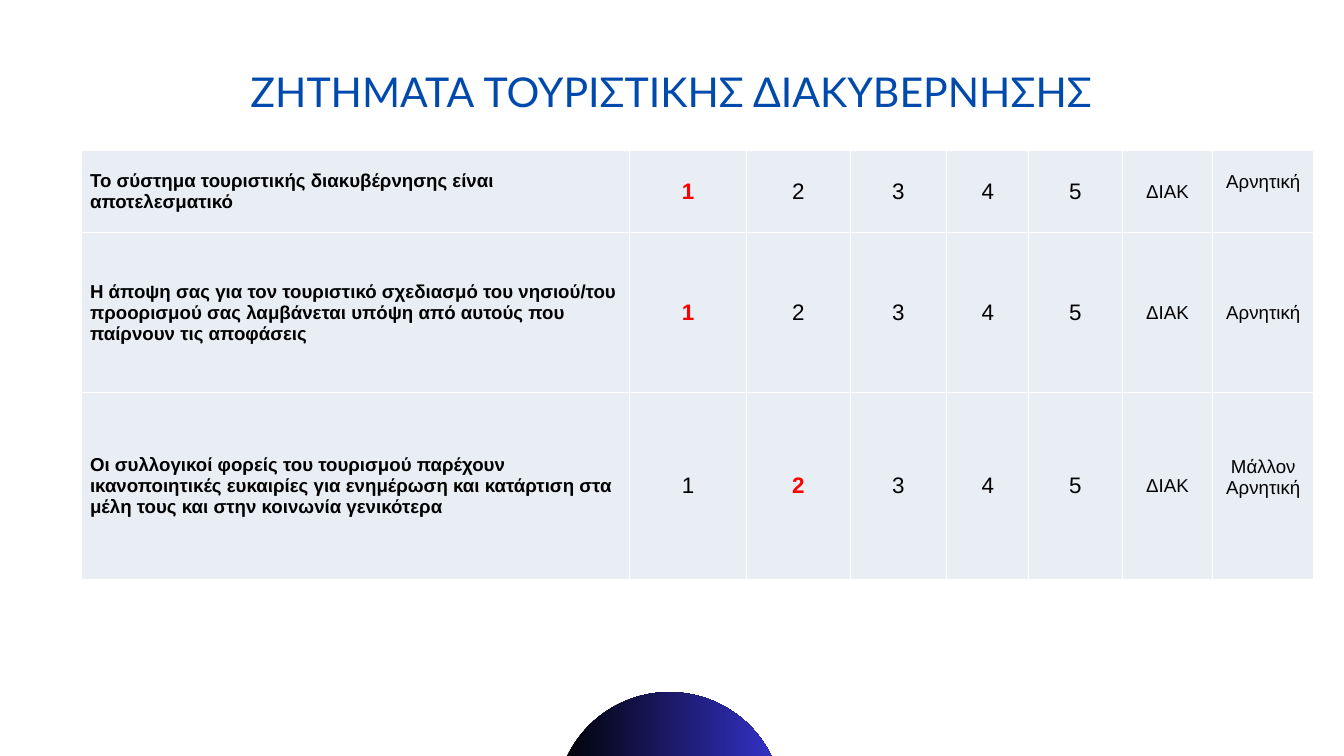
"""Build a slide with a table of survey answers on tourism governance."""
import pptx
import pptx.dml.color
import pptx.enum.shapes
import pptx.enum.text
import pptx.util

Inches = pptx.util.Inches
Pt = pptx.util.Pt
ALIGN = pptx.enum.text.PP_ALIGN
MIDDLE = pptx.enum.text.MSO_ANCHOR.MIDDLE


def color(hex_string):
    return pptx.dml.color.RGBColor.from_string(hex_string)


def format_font(font, name, size, hex_string, bold=False):
    font.name = name
    font.size = Pt(size)
    font.bold = bold
    font.color.rgb = color(hex_string)


deck = pptx.Presentation()
deck.slide_width = Inches(20)
deck.slide_height = Inches(11.25)
slide = deck.slides.add_slide(deck.slide_layouts[5])

title = slide.shapes.title
title.left, title.top = Inches(0.66), Inches(0.73)
title.width, title.height = Inches(18.67), Inches(1.25)
title.text_frame.text = "ΖΗΤΗΜΑΤΑ ΤΟΥΡΙΣΤΙΚΗΣ ΔΙΑΚΥΒΕΡΝΗΣΗΣ"
title.text_frame.auto_size = pptx.enum.text.MSO_AUTO_SIZE.NONE
title.text_frame.vertical_anchor = MIDDLE
title_para = title.text_frame.paragraphs[0]
title_para.alignment = ALIGN.CENTER
format_font(title_para.runs[0].font, "Lato", 44, "004AAD")

column_widths = [8.16, 1.74, 1.54, 1.44, 1.22, 1.39, 1.35, 1.5]
questions = [
    ("Το σύστημα τουριστικής διακυβέρνησης είναι αποτελεσματικό",
     "1", "Αρνητική", 1.22, 0.3),
    ("Η άποψη σας για τον τουριστικό σχεδιασμό του νησιού/του προορισμού σας "
     "λαμβάνεται υπόψη από αυτούς που παίρνουν τις αποφάσεις",
     "1", "Αρνητική", 2.38, 0),
    ("Οι συλλογικοί φορείς του τουρισμού παρέχουν ικανοποιητικές ευκαιρίες για "
     "ενημέρωση και κατάρτιση στα μέλη τους και στην κοινωνία γενικότερα",
     "2", "Μάλλον Αρνητική", 2.78, 0.27),
]
table_height = sum(question[3] for question in questions)
table = slide.shapes.add_table(
    len(questions), len(column_widths), Inches(1.21), Inches(2.24),
    Inches(sum(column_widths)), Inches(table_height)).table
table.first_row = False
table.horz_banding = False
for column, width in zip(table.columns, column_widths):
    column.width = Inches(width)

for row, (question, answer, verdict, height, verdict_lift) in zip(table.rows, questions):
    row.height = Inches(height)
    labels = [question, "1", "2", "3", "4", "5", "ΔΙΑΚ", verdict]
    for cell, label in zip(row.cells, labels):
        is_question = label == question
        is_answer = label == answer
        cell.fill.solid()
        cell.fill.fore_color.rgb = color("E9EDF4")
        cell.vertical_anchor = MIDDLE
        cell.margin_left = Inches(0.13 if is_question else 0.01)
        cell.margin_right = cell.margin_top = Inches(0.01)
        cell.margin_bottom = Inches(verdict_lift if label == verdict else 0)
        cell.text_frame.text = label
        para = cell.text_frame.paragraphs[0]
        para.alignment = ALIGN.LEFT if is_question else ALIGN.CENTER
        format_font(para.runs[0].font, "Arial", 24 if label.isdigit() else 20,
                    "FF0000" if is_answer else "000000", is_question or is_answer)

circle = slide.shapes.add_shape(
    pptx.enum.shapes.MSO_SHAPE.OVAL,
    Inches(8.27), Inches(10.3), Inches(3.38), Inches(3.38))
circle.shadow.inherit = False
circle.line.fill.background()
circle.fill.gradient()
circle.fill.gradient_angle = 0
for stop, position, hex_string in zip(
        circle.fill.gradient_stops, (0, 1), ("000000", "3533CD")):
    stop.position = position
    stop.color.rgb = color(hex_string)

deck.save("out.pptx")
